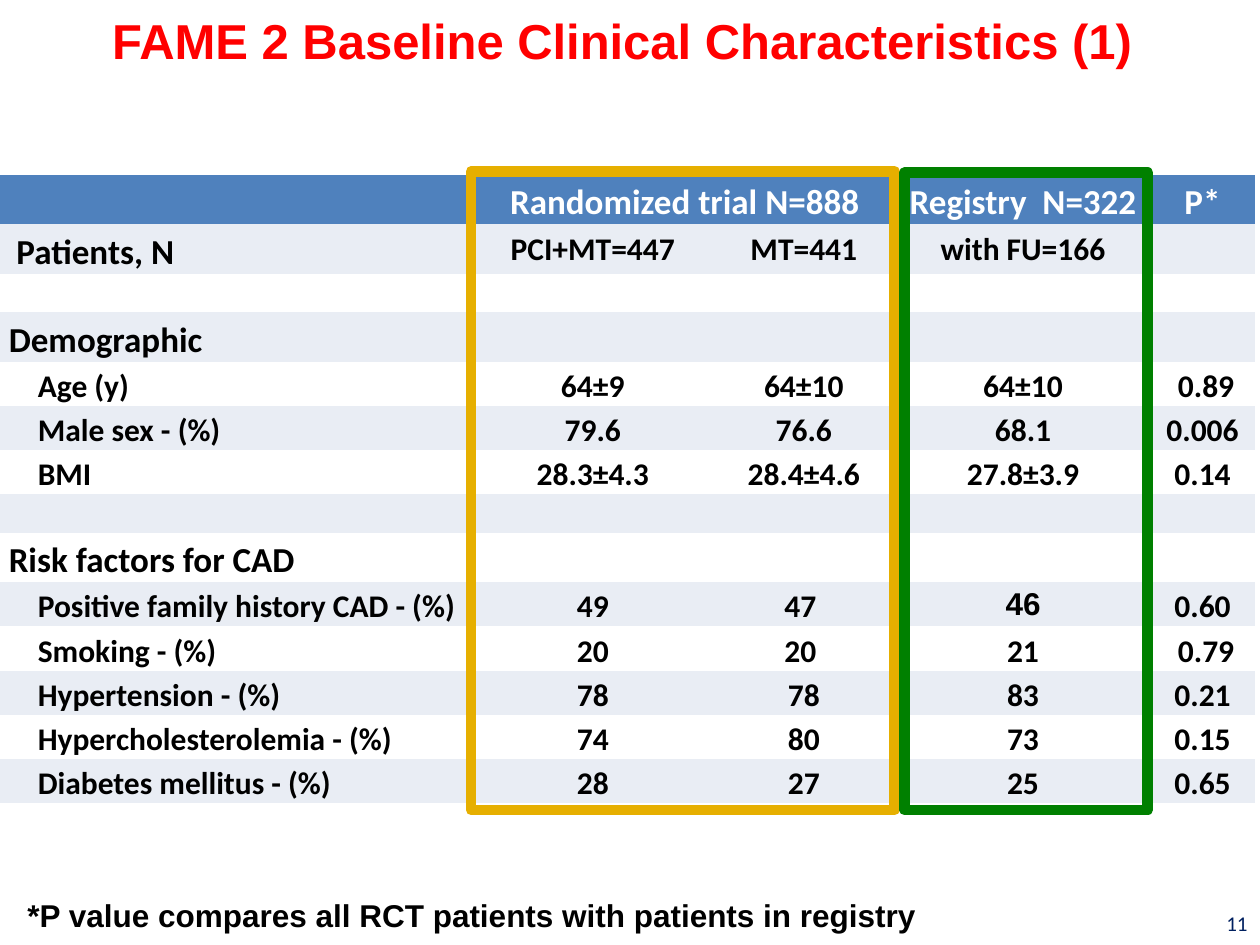
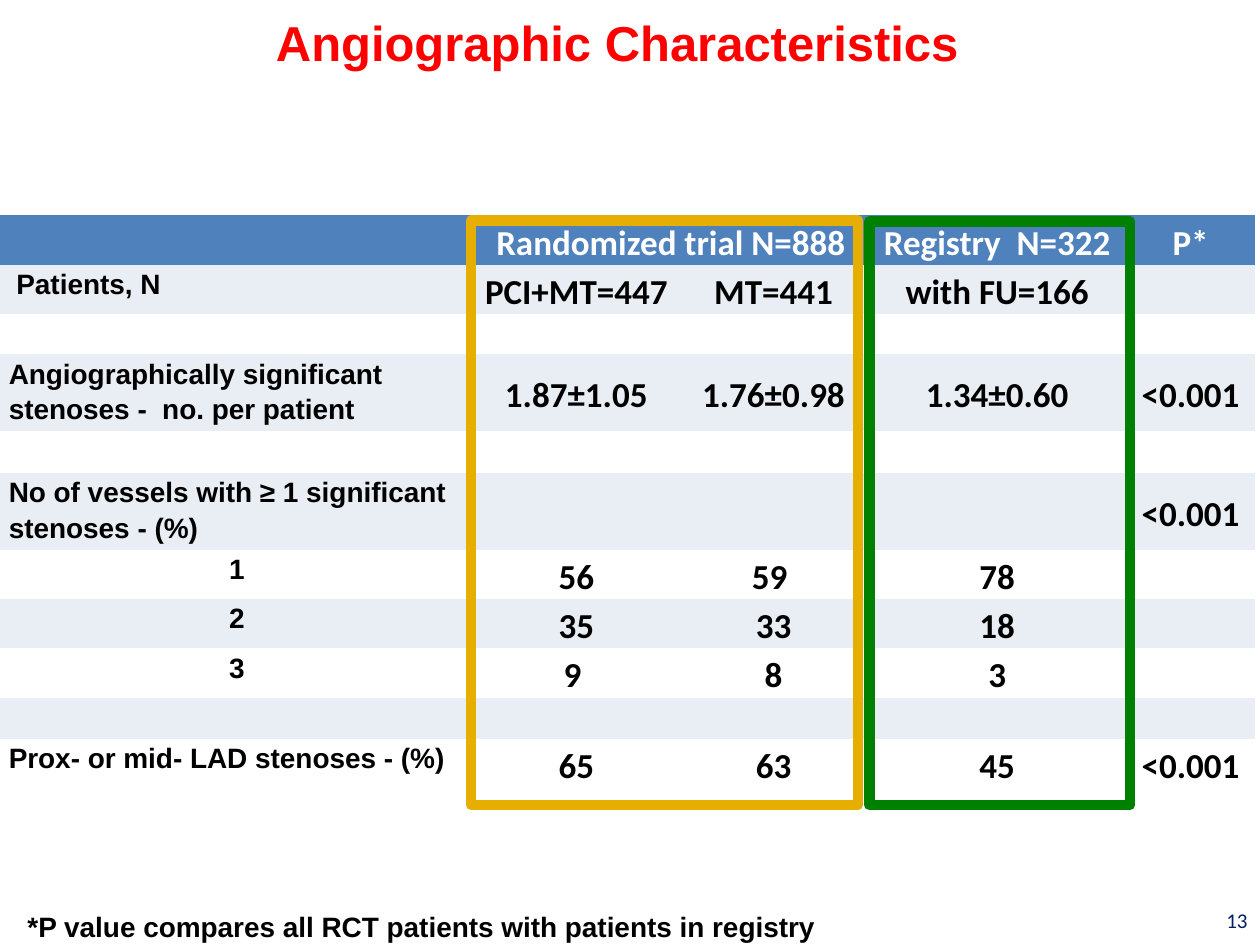
from pptx import Presentation
from pptx.dml.color import RGBColor
from pptx.enum.shapes import MSO_SHAPE
from pptx.enum.text import MSO_ANCHOR, MSO_AUTO_SIZE, PP_ALIGN
from pptx.oxml.ns import qn
from pptx.util import Inches, Pt

RED = RGBColor(0xFF, 0x00, 0x00)
BLACK = RGBColor(0x00, 0x00, 0x00)
WHITE = RGBColor(0xFF, 0xFF, 0xFF)
NAVY = RGBColor(0x00, 0x20, 0x60)
HEADER_BLUE = RGBColor(0x4F, 0x81, 0xBD)
BAND_GREY = RGBColor(0xE9, 0xED, 0xF4)
GOLD = RGBColor(0xE6, 0xAF, 0x00)
GREEN = RGBColor(0x00, 0x80, 0x00)

LEFT, CENTER, RIGHT = PP_ALIGN.LEFT, PP_ALIGN.CENTER, PP_ALIGN.RIGHT
TOP, MIDDLE = MSO_ANCHOR.TOP, MSO_ANCHOR.MIDDLE
ARIAL, CALIBRI = "Arial", "Calibri"
TITLE_ONLY = 5
NO_STYLE = "{2D5ABB26-0587-4C30-8999-92F81FD0307C}"
CELL_MARGIN = 0.07

# Shared wording
HEADER = ["", "Randomized trial N=888", "", "Registry  N=322", "P*"]
GROUPS = ["PCI+MT=447", "MT=441", "with FU=166", ""]
FOOTNOTE = "*P value compares all RCT patients with patients in registry"
NO_VALUES = [""] * 4

# Label styles: size, font, alignment, indent in inches
PATIENTS = (20, CALIBRI, LEFT, 0.06)
SECTION = (20, CALIBRI, LEFT, 0)
ITEM = (18, CALIBRI, LEFT, 0.23)
ARIAL_PATIENTS = (16, ARIAL, LEFT, 0.06)
MEASURE = (16, ARIAL, LEFT, 0)
COUNT = (16, ARIAL, CENTER, 0)

# Rows: label, label style, values, height in inches
SLIDES = [
    {
        "title": "FAME 2 Baseline Clinical Characteristics (1)",
        "title_box": (0.79, 0.03, 8.39, 0.57),
        "table_top": 1.39,
        "columns": [3.76, 1.89, 1.46, 2.02, 0.83],
        "value_size": 18,
        "arial_values": ["46"],
        "rows": [
            ("Patients, N", PATIENTS, GROUPS, 0.39),
            ("", SECTION, NO_VALUES, 0.3),
            ("Demographic", SECTION, NO_VALUES, 0.39),
            ("Age (y)", ITEM, ["64±9", "64±10", "64±10", " 0.89"], 0.35),
            ("Male sex - (%)", ITEM, ["79.6", "76.6", "68.1", "0.006"], 0.35),
            ("BMI", ITEM, ["28.3±4.3", "28.4±4.6", "27.8±3.9", "0.14"], 0.35),
            ("", SECTION, NO_VALUES, 0.3),
            ("Risk factors for CAD", SECTION, NO_VALUES, 0.39),
            ("Positive family history CAD - (%)", ITEM, ["49", "47 ", "46", "0.60"], 0.35),
            ("Smoking - (%)", ITEM, ["20", "20 ", "21", " 0.79"], 0.35),
            ("Hypertension - (%)", ITEM, ["78", "78", "83", "0.21"], 0.35),
            ("Hypercholesterolemia - (%)", ITEM, ["74", "80", "73", "0.15"], 0.35),
            ("Diabetes mellitus - (%)", ITEM, ["28", "27", "25", "0.65"], 0.35),
        ],
        "frames": [(GOLD, (3.74, 1.36, 3.36, 5.07)), (GREEN, (7.18, 1.37, 1.93, 5.06))],
        "footnote_box": (0.12, 7.06, 8.03, 0.4),
        "footnote_size": 18,
        "number": "11",
        "number_top": 7.13,
    },
    {
        "title": "Angiographic Characteristics",
        "title_box": (2.09, 0.05, 5.8, 0.57),
        "table_top": 1.71,
        "columns": [3.76, 1.63, 1.5, 2.05, 1.02],
        "value_size": 20,
        "arial_values": [],
        "rows": [
            ("Patients, N", ARIAL_PATIENTS, GROUPS, 0.39),
            ("", MEASURE, NO_VALUES, 0.32),
            ("Angiographically significant stenoses -  no. per patient", MEASURE,
             ["1.87±1.05", "1.76±0.98", "1.34±0.60", "<0.001"], 0.61),
            ("", MEASURE, NO_VALUES, 0.33),
            ("No of vessels with ≥ 1 significant stenoses - (%)", MEASURE,
             ["", "", "", "<0.001"], 0.61),
            ("1", COUNT, ["56", "59 ", "78", ""], 0.39),
            ("2", COUNT, ["35", "33", "18", ""], 0.39),
            ("3", COUNT, ["9 ", "8", "3", ""], 0.39),
            ("", MEASURE, NO_VALUES, 0.33),
            ("Prox- or mid- LAD stenoses - (%)", MEASURE,
             ["65", "63", "45", "<0.001"], 0.39),
        ],
        "frames": [(GOLD, (3.74, 1.75, 3.07, 4.64)), (GREEN, (6.9, 1.76, 2.07, 4.63))],
        "footnote_box": (0.12, 7.17, 8.03, 0.37),
        "footnote_size": 16,
        "number": "13",
        "number_top": 7.1,
    },
]
HEADER_HEIGHT = 0.39
TALL_ROW = 0.5


def inches(box):
    return [Inches(length) for length in box]


def write(frame, text, size, font, color, bold=True, align=LEFT):
    para = frame.paragraphs[0]
    para.alignment = align
    span = para.add_run()
    span.text = text
    span.font.size = Pt(size)
    span.font.name = font
    span.font.bold = bold
    span.font.color.rgb = color
    return para


def add_title(page, text, box):
    title = page.shapes.title
    title.left, title.top, title.width, title.height = inches(box)
    frame = title.text_frame
    frame.auto_size = MSO_AUTO_SIZE.NONE
    frame.word_wrap = False
    frame.vertical_anchor = TOP
    write(frame, text, 28, ARIAL, RED)


def add_text(page, text, box, size, font, color, bold, align, anchor):
    frame = page.shapes.add_textbox(*inches(box)).text_frame
    frame.word_wrap = True
    frame.vertical_anchor = anchor
    write(frame, text, size, font, color, bold, align)


def fill_cell(cell, text, style, color, fill, anchor):
    size, font, align, indent = style
    cell.fill.solid()
    cell.fill.fore_color.rgb = fill
    cell.margin_left = Inches(CELL_MARGIN + indent)
    cell.margin_right = Inches(CELL_MARGIN)
    cell.margin_top = cell.margin_bottom = 0
    cell.vertical_anchor = anchor
    if text:
        write(cell.text_frame, text, size, font, color, align=align).line_spacing = 1.15


def add_characteristics(page, content):
    columns, rows = content["columns"], content["rows"]
    heights = [HEADER_HEIGHT] + [row[-1] for row in rows]
    holder = page.shapes.add_table(
        len(heights), len(columns),
        *inches((0, content["table_top"], sum(columns), sum(heights))))
    for style_id in holder._element.iter(qn("a:tableStyleId")):
        style_id.text = NO_STYLE
    table = holder.table
    table.first_row = table.horz_banding = False
    for column, width in zip(table.columns, columns):
        column.width = Inches(width)
    for row, height in zip(table.rows, heights):
        row.height = Inches(height)

    # Header, with the trial spanning its two arms
    for c, text in enumerate(HEADER):
        fill_cell(table.cell(0, c), text, (20, CALIBRI, CENTER, 0), WHITE, HEADER_BLUE, MIDDLE)
    table.cell(0, 1).merge(table.cell(0, 2))

    # Banded body
    for r, (label, label_style, values, height) in enumerate(rows, start=1):
        band = BAND_GREY if r % 2 else WHITE
        fill_cell(table.cell(r, 0), label, label_style, BLACK, band, TOP)
        anchor = MIDDLE if height > TALL_ROW else TOP
        for c, value in enumerate(values, start=1):
            font = ARIAL if value in content["arial_values"] else CALIBRI
            style = (content["value_size"], font, CENTER, 0)
            fill_cell(table.cell(r, c), value, style, BLACK, band, anchor)


def add_group_frame(page, color, box):
    outline = page.shapes.add_shape(MSO_SHAPE.RECTANGLE, *inches(box))
    outline.shadow.inherit = False
    outline.fill.background()
    outline.line.color.rgb = color
    outline.line.width = Pt(6)


def main():
    deck = Presentation()
    deck.slide_width, deck.slide_height = Inches(10), Inches(7.5)
    for content in SLIDES:
        page = deck.slides.add_slide(deck.slide_layouts[TITLE_ONLY])
        add_title(page, content["title"], content["title_box"])
        add_characteristics(page, content)
        add_text(page, content["number"], (7.67, content["number_top"], 2.33, 0.4),
                 12, CALIBRI, NAVY, False, RIGHT, MIDDLE)
        for color, box in content["frames"]:
            add_group_frame(page, color, box)
        add_text(page, FOOTNOTE, content["footnote_box"], content["footnote_size"],
                 ARIAL, BLACK, True, LEFT, TOP)
    deck.save("out.pptx")


if __name__ == "__main__":
    main()
